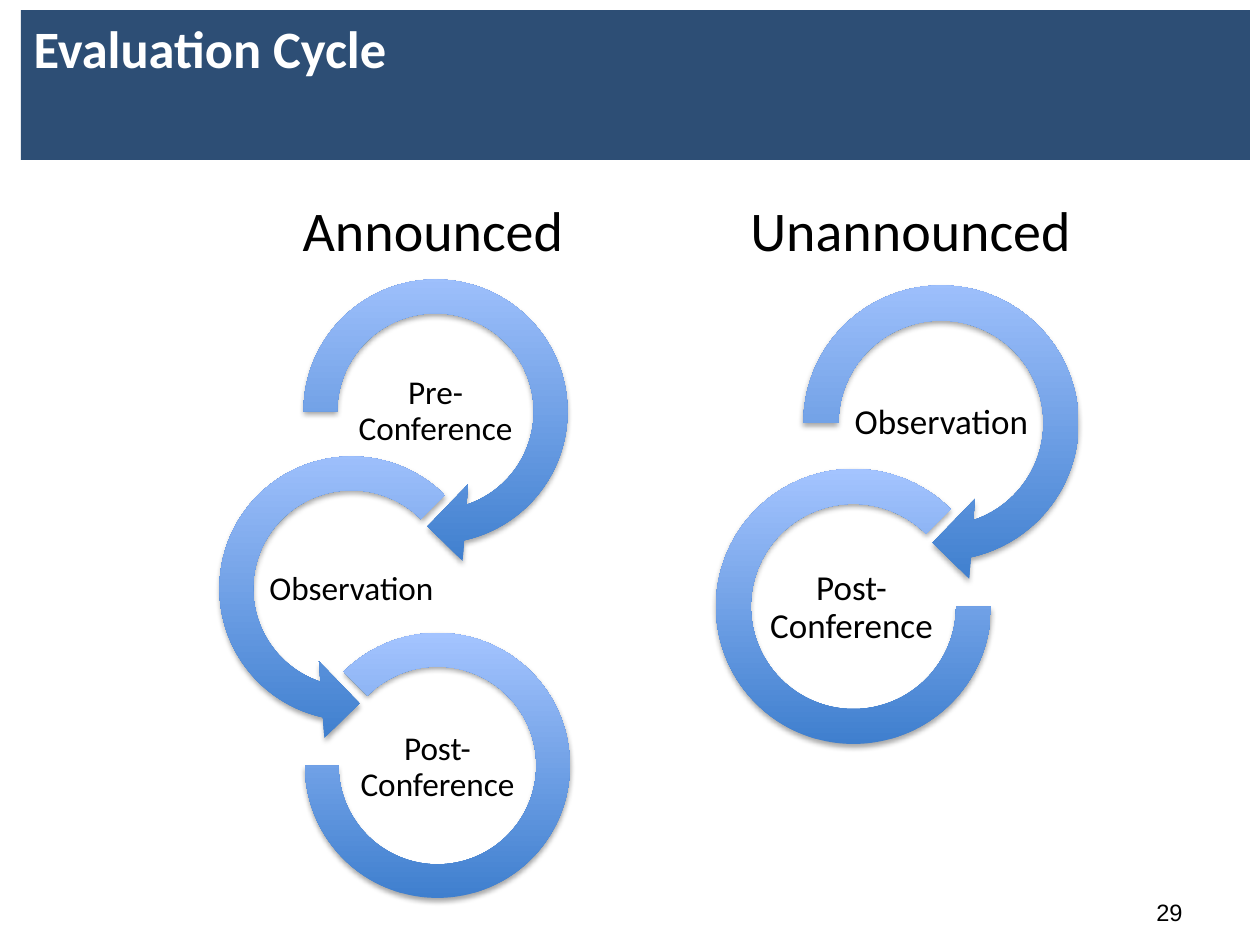
from typing import NamedTuple

from lxml import etree
from pptx import Presentation
from pptx.dml.color import RGBColor
from pptx.enum.shapes import MSO_SHAPE
from pptx.enum.text import MSO_ANCHOR, MSO_AUTO_SIZE, PP_ALIGN
from pptx.oxml import parse_xml
from pptx.oxml.ns import nsdecls, qn
from pptx.util import Emu, Pt

PX_PER_INCH = 126
NAVY = RGBColor(0x2D, 0x4E, 0x75)
WHITE = RGBColor(0xFF, 0xFF, 0xFF)
BLACK = RGBColor(0x00, 0x00, 0x00)
DEEP_BLUE = RGBColor(0x3F, 0x7F, 0xCE)
PALE_BLUE = RGBColor(0xA4, 0xC4, 0xFF)

RIGHT_ARROW = MSO_SHAPE.CIRCULAR_ARROW
LEFT_ARROW = MSO_SHAPE.LEFT_CIRCULAR_ARROW
ARC = MSO_SHAPE.BLOCK_ARC
LEFT, CENTER = PP_ALIGN.LEFT, PP_ALIGN.CENTER
TOP, MIDDLE = MSO_ANCHOR.TOP, MSO_ANCHOR.MIDDLE

RIGHT_SWEEP = (0.11, 11.42, 45, 108, 0.125)
LEFT_SWEEP = (0.11, 11.42, 63, 189, 0.125)
ARC_FROM_LEFT = (135, 108, 0.127)
ARC_FROM_RIGHT = (0, 189, 0.127)

SHADOW = f"""<a:effectLst {nsdecls("a")}>
  <a:outerShdw blurRad="39370" dist="22860" dir="5400000" rotWithShape="0">
    <a:srgbClr val="000000"><a:alpha val="35000"/></a:srgbClr>
  </a:outerShdw>
</a:effectLst>"""


class Step(NamedTuple):
    """One ring of a cycle: its square and the corner of its label."""
    label: str
    kind: MSO_SHAPE
    sweep: tuple
    left: int
    top: int
    side: int
    label_left: int
    label_top: int


class Cycle(NamedTuple):
    label_width: int
    label_height: int
    size: int
    steps: list


CYCLES = [
    Cycle(171, 86, 19, [
        Step("Pre-Conference", RIGHT_ARROW, RIGHT_SWEEP, 282, 258, 307, 350, 369),
        Step("Observation", LEFT_ARROW, LEFT_SWEEP, 198, 435, 307, 266, 547),
        Step("Post-Conference", ARC, ARC_FROM_LEFT, 305, 633, 265, 352, 725),
    ]),
    Cycle(179, 89, 20, [
        Step("Observation", RIGHT_ARROW, RIGHT_SWEEP, 781, 263, 320, 852, 379),
        Step("Post-Conference", ARC, ARC_FROM_RIGHT, 716, 469, 275, 762, 564),
    ]),
]


def px(length: int) -> Emu:
    return Emu(round(length * 914400 / PX_PER_INCH))


def apply(target, values: dict) -> None:
    for name, value in values.items():
        setattr(target, name, value)


def place(shape, left: int, top: int, width: int, height: int) -> None:
    apply(shape, {"left": px(left), "top": px(top),
                  "width": px(width), "height": px(height)})


def write(shape, text: str, size: float, color=BLACK, bold=False, font="Calibri",
          align=LEFT, anchor=TOP, indent=0, wrap=True, spacing=None):
    """Fill the shape with one formatted, unbulleted paragraph."""
    frame = shape.text_frame
    apply(frame, {"text": text, "word_wrap": wrap, "vertical_anchor": anchor,
                  "auto_size": MSO_AUTO_SIZE.NONE})
    para = frame.paragraphs[0]
    properties = para._p.get_or_add_pPr()
    properties.set("marL", str(px(indent)))
    properties.set("indent", "0")
    apply(para, {"alignment": align, "space_before": Pt(0), "line_spacing": spacing})
    etree.SubElement(properties, qn("a:buNone"))
    apply(para.runs[0].font, {"name": font, "size": Pt(size), "bold": bold})
    para.runs[0].font.color.rgb = color


def add_text(shapes, area: tuple, text: str, size: float, **style):
    box = shapes.add_textbox(*map(px, area))
    write(box, text, size, **style)
    return box


def add_ring(shapes, step: Step) -> None:
    ring = shapes.add_shape(step.kind, px(step.left), px(step.top),
                            px(step.side), px(step.side))
    for index, value in enumerate(step.sweep):
        ring.adjustments[index] = value
    ring.fill.gradient()
    ring.fill.gradient_angle = 90
    for stop, color in zip(ring.fill.gradient_stops, (DEEP_BLUE, PALE_BLUE)):
        stop.color.rgb = color
    ring.line.fill.background()
    ring._element.spPr.append(parse_xml(SHADOW))


def add_cycle(page, cycle: Cycle) -> None:
    shapes = page.shapes.add_group_shape().shapes
    for step in cycle.steps:
        add_ring(shapes, step)
        area = (step.label_left, step.label_top, cycle.label_width, cycle.label_height)
        label = add_text(shapes, area, step.label, cycle.size,
                         align=CENTER, anchor=MIDDLE, spacing=0.9)
        sides = ("left", "right", "top", "bottom")
        apply(label.text_frame, {f"margin_{side}": px(1) for side in sides})


def main() -> None:
    deck = Presentation()
    apply(deck, {"slide_width": px(1260), "slide_height": px(945)})
    page = deck.slides.add_slide(deck.slide_layouts[1])

    title = page.shapes.title
    place(title, 21, 10, 1229, 150)
    title.fill.solid()
    title.fill.fore_color.rgb = NAVY
    write(title, "Evaluation Cycle", 30, color=WHITE, bold=True)

    body = page.placeholders[1]
    place(body, 21, 189, 1134, 651)
    write(body, "Announced", 32, indent=269)
    add_text(page.shapes, (683, 189, 530, 74), "Unannounced", 32, indent=55)

    for cycle in CYCLES:
        add_cycle(page, cycle)
    add_text(page.shapes, (1144, 892, 54, 42), "29", 13.5, font="Arial", wrap=False)
    deck.save("out.pptx")


if __name__ == "__main__":
    main()
